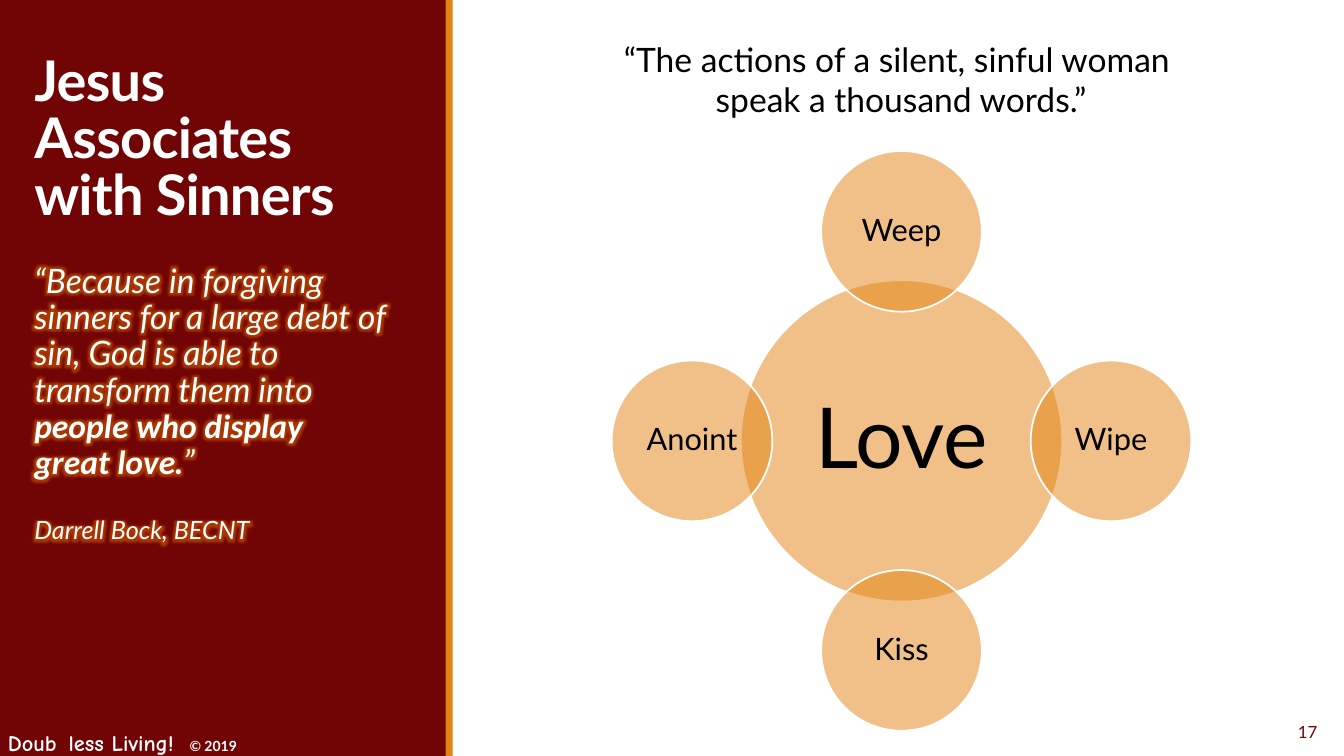
import pptx
import pptx.dml.color
import pptx.enum.shapes
import pptx.enum.text
import pptx.oxml
import pptx.oxml.ns
import pptx.util

Cm = pptx.util.Cm
Pt = pptx.util.Pt
RGBColor = pptx.dml.color.RGBColor
Align = pptx.enum.text.PP_ALIGN
Anchor = pptx.enum.text.MSO_ANCHOR
Preset = pptx.enum.shapes.MSO_SHAPE

MAROON = RGBColor(0x71, 0x05, 0x05)
ORANGE = RGBColor(0xE4, 0x83, 0x12)
GLOW = RGBColor(0xFF, 0x80, 0x00)
WHITE = RGBColor(0xFF, 0xFF, 0xFF)
BLACK = RGBColor(0x00, 0x00, 0x00)


def element(tag, content="", **attributes):
    listed = " ".join(f'{name}="{value}"' for name, value in attributes.items())
    namespace = pptx.oxml.ns.nsdecls("a")
    return pptx.oxml.parse_xml(f"<a:{tag} {namespace} {listed}>{content}</a:{tag}>")


class SlideBuilder:
    font = "Lato"

    def __init__(self, presentation):
        layout = presentation.slide_layouts[1]
        self.slide = presentation.slides.add_slide(layout)

    def shape(self, preset, left, top, width, height, color):
        shape = self.slide.shapes.add_shape(
            preset, Cm(left), Cm(top), Cm(width), Cm(height))
        shape.shadow.inherit = False
        shape.fill.solid()
        shape.fill.fore_color.rgb = color
        shape.line.fill.background()
        return shape

    def circle(self, label, center_x, center_y, diameter, size, margin):
        shape = self.shape(Preset.OVAL, center_x - diameter / 2,
                           center_y - diameter / 2, diameter, diameter, ORANGE)
        color = shape.fill._xPr.find(".//" + pptx.oxml.ns.qn("a:srgbClr"))
        color.append(element("alpha", val=50000))
        shape.line.color.rgb = WHITE
        shape.line.width = Pt(1.25)
        frame = shape.text_frame
        frame.word_wrap = True
        frame.vertical_anchor = Anchor.MIDDLE
        frame.margin_left = frame.margin_right = Cm(margin)
        frame.margin_top = frame.margin_bottom = Cm(margin)
        paragraph = frame.paragraphs[0]
        paragraph.alignment = Align.CENTER
        paragraph.line_spacing = 0.9
        self.run(paragraph, label, size, BLACK)

    def text_box(self, left, top, width, height, alignment, anchor=Anchor.TOP):
        box = self.slide.shapes.add_textbox(
            Cm(left), Cm(top), Cm(width), Cm(height))
        box.text_frame.word_wrap = True
        box.text_frame.vertical_anchor = anchor
        paragraph = box.text_frame.paragraphs[0]
        paragraph.alignment = alignment
        return paragraph

    def placeholder(self, index, left, top, width, height):
        shape = self.slide.placeholders[index]
        shape.left, shape.top = Cm(left), Cm(top)
        shape.width, shape.height = Cm(width), Cm(height)
        shape._element.getparent().append(shape._element)
        frame = shape.text_frame
        frame.auto_size = pptx.enum.text.MSO_AUTO_SIZE.NONE
        frame.vertical_anchor = Anchor.TOP
        frame.word_wrap = True
        return frame

    def plain_paragraph(self, paragraph, line_spacing, before=0, after=0):
        properties = paragraph._p.get_or_add_pPr()
        properties.set("marL", "0")
        properties.set("indent", "0")
        properties.append(element("buNone"))
        paragraph.alignment = Align.LEFT
        paragraph.line_spacing = line_spacing
        paragraph.space_before = Pt(before)
        paragraph.space_after = Pt(after)
        return paragraph

    def run(self, paragraph, text, size, color, font=None, bold=False, italic=False):
        run = paragraph.add_run()
        run.text = text
        run.font.size = Pt(size)
        run.font.color.rgb = color
        run.font.name = font or self.font
        run.font.bold = bold
        run.font.italic = italic
        return run

    def glowing_run(self, paragraph, text, size, font=None, bold=False):
        run = self.run(paragraph, text, size, WHITE, font, bold, italic=True)
        glow = (f'<a:glow rad="{Pt(8)}"><a:srgbClr val="{GLOW}">'
                '<a:alpha val="40000"/></a:srgbClr></a:glow>')
        fill = run.font._element.find(pptx.oxml.ns.qn("a:solidFill"))
        fill.addnext(element("effectLst", glow))


def build_side_panel(builder):
    builder.shape(Preset.RECTANGLE, 0, 0, 11.25, 19.05, MAROON)
    builder.shape(Preset.RECTANGLE, 11.23, 0, 0.18, 19.05, ORANGE)

    footer = builder.text_box(-0.05, 17.96, 9.96, 1.27, Align.LEFT)
    stop = f'<a:tab pos="{Cm(4.58)}" algn="l"/>'
    footer._p.get_or_add_pPr().append(element("tabLst", stop))
    for text, size, font in (("Doub", 16, "Comic Neue"), (" ", 24, "Comic Neue"),
                             ("less Living!\t", 16, "Comic Neue"),
                             ("© 2019", 10, "Lato")):
        builder.run(footer, text, size, WHITE, font, bold=True)

    title = builder.placeholder(0, 0.61, 1.27, 10.19, 4.65).paragraphs[0]
    builder.plain_paragraph(title, 0.85)
    for position, text in enumerate(("Jesus Associates ", "with Sinners")):
        if position:
            title.add_line_break()
        run = builder.run(title, text, 40, WHITE, bold=True)
        run.font._element.set("spc", "-50")

    body = builder.placeholder(1, 0.61, 6.53, 9.55, 10.95)
    quote = builder.plain_paragraph(body.paragraphs[0], 0.9)
    builder.glowing_run(quote, "“Because in forgiving sinners for a large debt of sin, "
                        "God is able to transform them into ", 24)
    builder.glowing_run(quote, "people who display ", 24, "Calibri", bold=True)
    quote.add_line_break()
    builder.glowing_run(quote, "great love", 24, "Calibri", bold=True)
    builder.glowing_run(quote, ".", 24, bold=True)
    builder.glowing_run(quote, "”", 24)
    author = builder.plain_paragraph(body.add_paragraph(), 0.9, before=26, after=2)
    builder.glowing_run(author, "Darrell Bock, BECNT", 18)


def build_love_diagram(builder):
    center_x, center_y, orbit = 22.72, 11.11, 5.28
    builder.circle("Love", center_x, center_y, 8.1, 60, 0.2)
    for label, across, down in (("Weep", 0, -1), ("Wipe", 1, 0),
                                ("Kiss", 0, 1), ("Anoint", -1, 0)):
        builder.circle(label, center_x + across * orbit,
                       center_y + down * orbit, 4.05, 22, 0.08)


def main():
    presentation = pptx.Presentation()
    presentation.slide_width = Cm(33.87)
    presentation.slide_height = Cm(19.05)
    builder = SlideBuilder(presentation)

    build_side_panel(builder)
    build_love_diagram(builder)

    number = builder.text_box(30.02, 17.93, 3.43, 1.02, Align.RIGHT, Anchor.MIDDLE)
    builder.run(number, "17", 12, MAROON)

    headline = builder.text_box(14.15, 0.86, 17.12, 2.31, Align.CENTER)
    builder.run(headline, "“The actions of a silent, sinful woman ", 24, BLACK)
    headline.add_line_break()
    builder.run(headline, "speak a thousand words.”", 24, BLACK)

    presentation.save("out.pptx")


if __name__ == "__main__":
    main()
